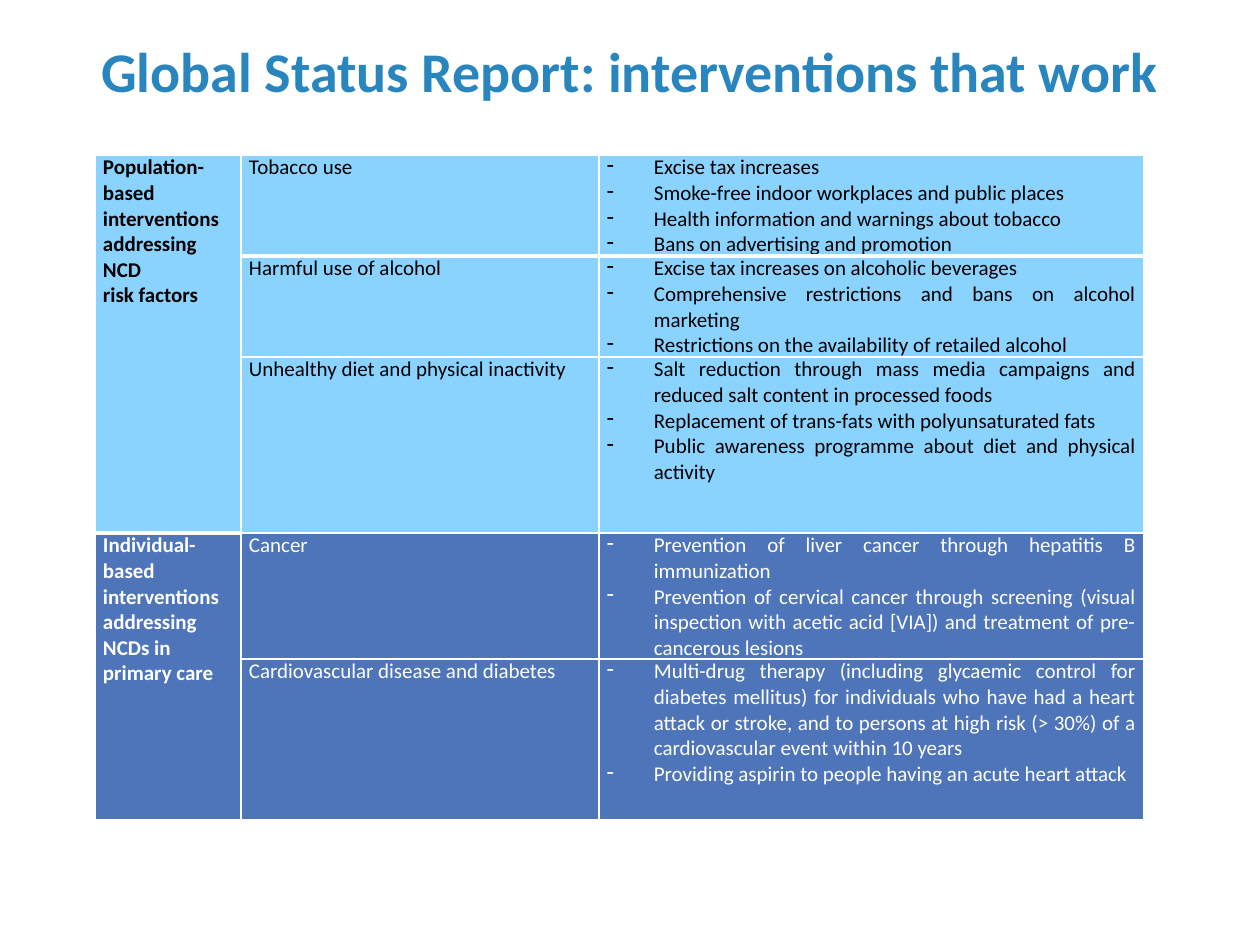
import pptx
import pptx.dml.color
import pptx.enum.text
import pptx.oxml.ns
import pptx.util
import lxml.etree

PX = 914400 // 126
ALIGN = pptx.enum.text.PP_ALIGN

THEME = {
    "font": "Calibri",
    "title_size": 32,
    "body_size": 12,
    "title": "2985BD",
    "dark": "000000",
    "white": "FFFFFF",
    "light_blue": "8BD3FF",
    "deep_blue": "4E75B9",
}

TITLE = "Global Status Report: interventions that work"
TITLE_BOX = (63, 38, 1134, 158)

GROUPS = [
    {
        "label": ["Population-based interventions ", "addressing NCD ", "risk factors"],
        "align": ALIGN.JUSTIFY,
        "fill": "light_blue",
        "ink": "dark",
        "risks": [
            ("Tobacco use", 101, [
                "Excise tax increases ",
                "Smoke-free indoor workplaces and public places",
                "Health information and warnings about tobacco ",
                "Bans on advertising and promotion",
            ]),
            ("Harmful use of alcohol", 101, [
                "Excise tax increases on alcoholic beverages ",
                "Comprehensive restrictions and bans on alcohol marketing",
                "Restrictions on the availability of retailed alcohol ",
            ]),
            ("Unhealthy diet and physical inactivity", 176, [
                "Salt reduction through mass media campaigns and reduced salt content in processed foods",
                "Replacement of trans-fats with polyunsaturated fats",
                "Public awareness programme about diet and physical activity",
            ]),
        ],
    },
    {
        "label": ["Individual-based interventions", "addressing NCDs in primary care"],
        "align": ALIGN.LEFT,
        "fill": "deep_blue",
        "ink": "white",
        "risks": [
            ("Cancer", 126, [
                "Prevention of liver cancer through hepatitis B immunization",
                "Prevention of cervical cancer through screening (visual inspection with "
                "acetic acid [VIA]) and treatment of pre-cancerous lesions",
            ]),
            ("Cardiovascular disease and diabetes", 161, [
                "Multi-drug therapy (including glycaemic control for diabetes mellitus) for "
                "individuals who have had a heart attack or stroke, and to persons at high risk "
                "(> 30%) of a cardiovascular event within 10 years",
                "Providing aspirin to people having an acute heart attack",
            ]),
        ],
    },
]

TABLE_LEFT, TABLE_TOP = 95, 155
COLUMN_WIDTHS = [146, 358, 545]
CELL_INSET = 8
HANGING = 47


def px(length):
    return pptx.util.Emu(length * PX)


def rgb(name):
    return pptx.dml.color.RGBColor.from_string(THEME[name])


def add_text(paragraph, text, size, ink, bold, align):
    paragraph.alignment = align
    run = paragraph.add_run()
    run.text = text
    for font in (paragraph.font, run.font):
        font.name = THEME["font"]
        font.size = pptx.util.Pt(THEME[size])
        font.bold = bold
        font.color.rgb = rgb(ink)


def add_dash(paragraph):
    properties = paragraph._p.get_or_add_pPr()
    properties.set("marL", str(px(HANGING)))
    properties.set("indent", str(-px(HANGING)))
    dash = lxml.etree.SubElement(properties, pptx.oxml.ns.qn("a:buChar"))
    dash.set("char", "-")


def add_borders(cell, top, bottom):
    properties = cell._tc.get_or_add_tcPr()
    for side, points in (("L", 1), ("R", 1), ("T", top), ("B", bottom)):
        line = lxml.etree.SubElement(properties, pptx.oxml.ns.qn(f"a:ln{side}"))
        line.set("w", str(pptx.util.Pt(points)))
        fill = lxml.etree.SubElement(line, pptx.oxml.ns.qn("a:solidFill"))
        color = lxml.etree.SubElement(fill, pptx.oxml.ns.qn("a:srgbClr"))
        color.set("val", THEME["white"])


def fill_cell(cell, texts, group, bold=False, align=ALIGN.LEFT, dashed=False, top=1, bottom=1):
    cell.margin_left = cell.margin_right = px(CELL_INSET)
    cell.margin_top = cell.margin_bottom = 0
    add_borders(cell, top, bottom)
    cell.fill.solid()
    cell.fill.fore_color.rgb = rgb(group["fill"])
    frame = cell.text_frame
    for index, text in enumerate(texts):
        paragraph = frame.add_paragraph() if index else frame.paragraphs[0]
        if dashed:
            add_dash(paragraph)
        add_text(paragraph, text, "body_size", group["ink"], bold, align)


def add_title(slide):
    frame = slide.shapes.add_textbox(*map(px, TITLE_BOX)).text_frame
    frame.word_wrap = True
    heading = frame.paragraphs[0]
    heading.line_spacing = 0.9
    add_text(heading, TITLE, "title_size", "title", True, ALIGN.CENTER)


def add_interventions(slide):
    heights = [height for group in GROUPS for _, height, _ in group["risks"]]
    table = slide.shapes.add_table(
        len(heights), len(COLUMN_WIDTHS), px(TABLE_LEFT), px(TABLE_TOP),
        px(sum(COLUMN_WIDTHS)), px(sum(heights)),
    ).table
    table.first_row = table.horz_banding = False
    for column, width in zip(table.columns, COLUMN_WIDTHS):
        column.width = px(width)
    for row, height in zip(table.rows, heights):
        row.height = px(height)

    start = 0
    for group in GROUPS:
        end = start + len(group["risks"])
        label = table.cell(start, 0)
        label.merge(table.cell(end - 1, 0))
        fill_cell(label, group["label"], group, bold=True, align=group["align"],
                  top=3 if start else 1, bottom=1 if start else 3)
        for row, (risk, _, measures) in enumerate(group["risks"], start):
            edges = {"top": 3 if row == 1 else 1, "bottom": 3 if row == 0 else 1}
            fill_cell(table.cell(row, 1), [risk], group, **edges)
            fill_cell(table.cell(row, 2), measures, group, align=ALIGN.JUSTIFY,
                      dashed=True, **edges)
        start = end


def main():
    deck = pptx.Presentation()
    deck.slide_width, deck.slide_height = px(1260), px(945)
    slide = deck.slides.add_slide(deck.slide_layouts[6])
    add_title(slide)
    add_interventions(slide)
    deck.save("out.pptx")


if __name__ == "__main__":
    main()
